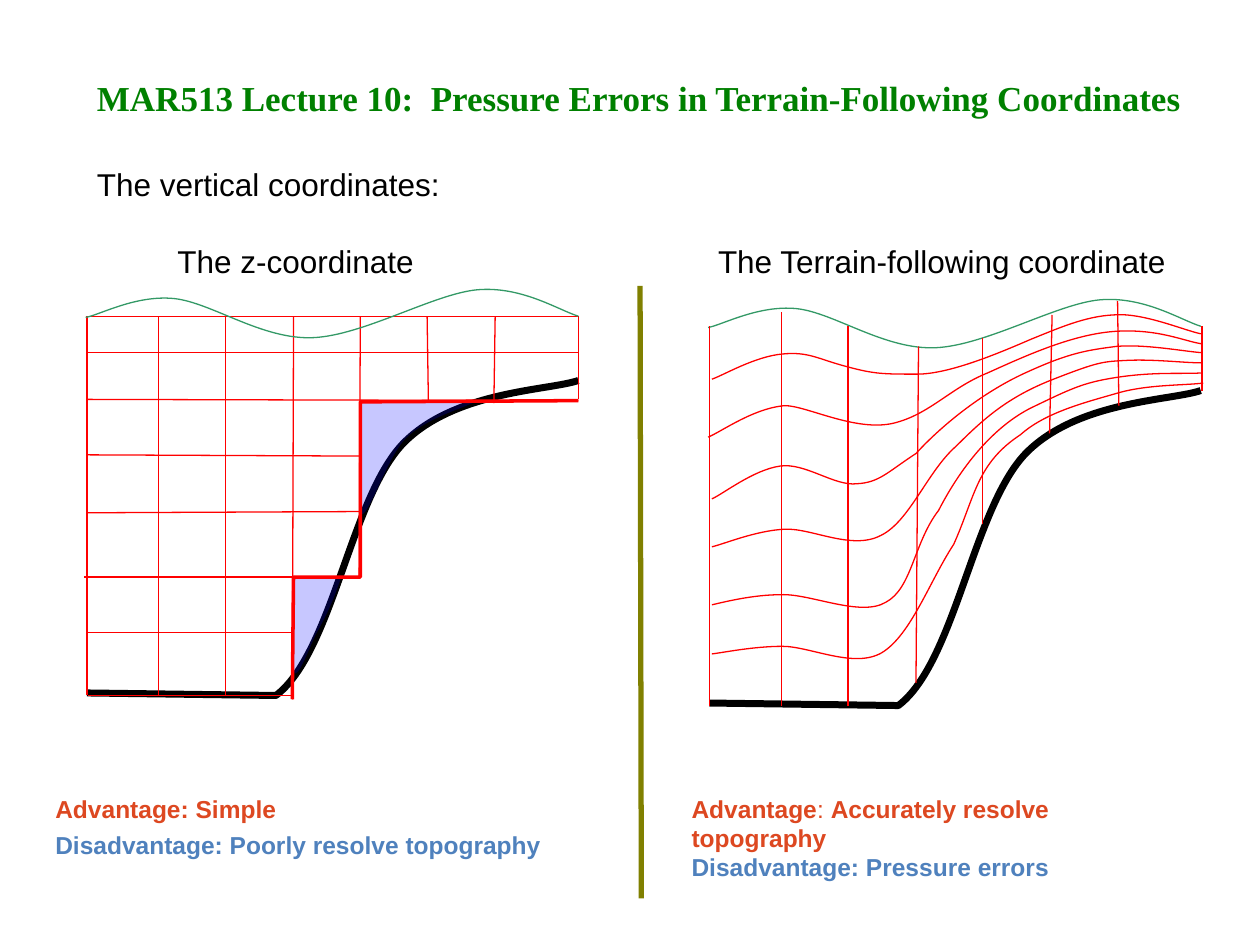
from dataclasses import dataclass

from lxml import etree
from pptx import Presentation, util as u
from pptx.dml.color import RGBColor
from pptx.enum import shapes, text
from pptx.oxml.ns import qn

# Grid: 1000 columns by 750 rows on a 10 x 7.5 inch slide
COLS, ROWS = 1000, 750
CELL = u.Inches(0.01)


@dataclass(frozen=True)
class Theme:
    title: str = "008000"
    ink: str = "000000"
    grid: str = "FF0000"
    wave: str = "339966"
    rule: str = "808000"
    gap: str = "0000FF"
    pro: str = "DD4821"
    con: str = "4F81BD"
    serif: str = "Times New Roman"
    sans: str = "Arial"
    head: int = 20
    body: int = 18
    note: int = 14
    thin: float = 0.75
    step: float = 2
    bar: float = 3
    bed: float = 4


T = Theme()

# Outlines shared by both panels, in cells from the panel's corner
BED = [(390, 75), (367, 83), (292, 83), (251, 125), (209, 169), (195, 291),
       (150, 325), (0, 323)]
WAVE = [(-1, 25), (10, 23), (39, 7), (69, 10), (99, 13), (139, 43), (180, 41),
        (220, 39), (276, 6), (310, 3), (345, 0), (374, 19), (390, 24)]

# z-coordinate grid: x1, y1, x2, y2
LEVELS = [(-1, 24, 390, 24), (0, 53, 390, 53), (0, 90, 390, 91),
          (0, 134, 218, 135), (0, 180, 217, 179), (-2, 231, 215, 231),
          (0, 275, 163, 275), (1, 325, 164, 325)]
WALLS = [(0, 24, 0, 325), (57, 24, 57, 325), (110, 24, 110, 325),
         (164, 24, 163, 328), (217, 24, 216, 231), (270, 24, 271, 92),
         (324, 24, 323, 93), (390, 24, 390, 90)]
STEPS = [(390, 91), (217, 92), (217, 231), (164, 231), (163, 328)]
GAPS = [
    [(309, 92), (218, 93), (217, 181), (223, 186), (238, 136), (253, 121),
     (268, 106), (295, 98), (306, 93)],
    [(202, 231), (165, 232), (164, 306), (167, 314), (176, 288), (182, 276),
     (196, 251), (198, 241), (202, 231)],
]

# Terrain-following grid
LAYERS = [
    [(2, 66), (11, 63), (36, 48), (58, 46), (79, 44), (86, 50), (109, 56),
     (131, 62), (138, 62), (165, 62), (192, 62), (235, 43), (256, 34),
     (276, 26), (298, 16), (321, 15), (344, 13), (376, 27), (390, 30)],
    [(-1, 112), (9, 108), (35, 89), (60, 87), (77, 87), (116, 108), (146, 101),
     (175, 94), (191, 73), (221, 61), (254, 46), (290, 30), (323, 28),
     (357, 26), (377, 36), (391, 38)],
    [(2, 161), (11, 157), (35, 138), (56, 135), (76, 132), (99, 151),
     (117, 149), (135, 148), (141, 140), (164, 125), (186, 101), (219, 75),
     (253, 60), (286, 45), (300, 43), (323, 40), (346, 38), (377, 44), (391, 45)],
    [(2, 199), (11, 197), (37, 186), (60, 185), (81, 184), (113, 202),
     (136, 190), (159, 179), (173, 139), (196, 119), (218, 97), (237, 80),
     (273, 66), (309, 52), (312, 52), (332, 51), (353, 50), (377, 53), (391, 53)],
    [(2, 245), (11, 243), (34, 237), (57, 237), (80, 236), (120, 255),
     (140, 243), (161, 232), (162, 196), (182, 170), (201, 133), (228, 101),
     (259, 87), (290, 72), (299, 68), (327, 64), (356, 60), (377, 62), (390, 61)],
    [(2, 284), (11, 283), (35, 278), (58, 278), (80, 278), (115, 296),
     (137, 283), (160, 269), (175, 226), (194, 197), (211, 159), (212, 133),
     (247, 110), (267, 92), (300, 84), (324, 77), (348, 70), (378, 71), (392, 69)],
]
POSTS = [(0, 24, 0, 325), (57, 13, 57, 325), (110, 24, 110, 325),
         (166, 40, 164, 307), (217, 33, 217, 181), (272, 15, 270, 109),
         (324, 4, 325, 87), (391, 24, 391, 75)]


def tint(hue):
    return RGBColor.from_string(hue)


def line(page, box, ends, hue=T.grid, wide=T.thin):
    """Straight line between two points of a box."""
    x, y = box[:2]
    a, b, c, d = ends
    link = page.shapes.add_connector(
        shapes.MSO_CONNECTOR.STRAIGHT,
        *(CELL * n for n in (x + a, y + b, x + c, y + d)))
    link.line.color.rgb = tint(hue)
    link.line.width = u.Pt(wide)
    etree.SubElement(link._element.spPr, qn("a:effectLst"))


def trace(page, box, pts, hue, wide=0, lead=0, tail=0):
    """Outline whose first `lead` and last `tail` segments are straight and
    whose other points are Bezier triples; no width means a clear fill."""
    x, y = box[:2]
    spots = [(x + a, y + b) for a, b in pts]
    pen = page.shapes.build_freeform(*spots[0], scale=CELL)
    pen.add_line_segments(spots[1:], close=not wide)
    form = pen.convert_to_shape()
    form.shadow.inherit = False
    legs = form._element.xpath(".//a:lnTo")
    bends = legs[lead:len(pts) - 1 - tail]
    for i in range(0, len(bends), 3):
        arc = etree.Element(qn("a:cubicBezTo"))
        bends[i].addprevious(arc)
        for leg in bends[i:i + 3]:
            arc.append(leg[0])
            leg.getparent().remove(leg)
    if wide:
        form.fill.background()
        form.line.color.rgb = tint(hue)
        form.line.width = u.Pt(wide)
    else:
        form.line.fill.background()
        form.fill.solid()
        form.fill.fore_color.rgb = tint(hue)
        shade = form._element.spPr.find(qn("a:solidFill"))[0]
        etree.SubElement(shade, qn("a:alpha"), val="22000")


def label(page, box, paras, size=T.body, face=T.sans, wrap=False, lift=0):
    """Text box; each paragraph is a list of (words, colour, bold)."""
    area = page.shapes.add_textbox(*(CELL * n for n in box))
    frame = area.text_frame
    frame.word_wrap = wrap
    frame.auto_size = text.MSO_AUTO_SIZE.SHAPE_TO_FIT_TEXT
    for i, parts in enumerate(paras):
        para = frame.add_paragraph() if i else frame.paragraphs[0]
        if i and lift:
            para.space_before = u.Pt(lift)
        for words, hue, bold in parts:
            run = para.add_run()
            run.text = words
            font = run.font
            font.name, font.size, font.bold = face, u.Pt(size), bold
            font.color.rgb = tint(hue)


def header(page, box):
    x, y, w, h = box
    label(page, (x, y, w, 44), [[(
        "MAR513 Lecture 10:  Pressure Errors in Terrain-Following Coordinates",
        T.title, True)]], T.head, T.serif)
    label(page, (x, y + 70, 299, 40),
          [[("The vertical coordinates:", T.ink, False)]])


def level(page, box):
    """Panel with flat levels and a stepped bottom."""
    x, y, w, h = box
    label(page, (x + 62, y - 40, 208, 40), [[("The z-coordinate", T.ink, False)]])
    trace(page, box, BED, T.ink, T.bed, tail=1)
    for ends in LEVELS + WALLS:
        line(page, box, ends)
    for gap in GAPS:
        trace(page, box, gap, T.gap, lead=2)
    trace(page, box, STEPS, T.grid, T.step, lead=len(STEPS) - 1)
    trace(page, box, WAVE, T.wave, T.thin)
    label(page, (x - 35, y + h, 412, 63),
          [[("Advantage: Simple", T.pro, True)],
           [("Disadvantage: Poorly resolve topography", T.con, True)]],
          T.note, lift=4)


def follow(page, box):
    """Panel with layers that follow the sea bed."""
    x, y, w, h = box
    label(page, (x - 3, y - 48, 379, 40),
          [[("The Terrain-following coordinate", T.ink, False)]])
    trace(page, box, BED, T.ink, T.bed, tail=1)
    trace(page, box, WAVE, T.wave, T.thin)
    for layer in LAYERS:
        trace(page, box, layer, T.grid, T.thin)
    for ends in POSTS:
        line(page, box, ends)
    label(page, (x - 24, y + h, 410, 57),
          [[("Advantage", T.pro, True), (": ", T.pro, False),
            ("Accurately resolve topography", T.pro, True)],
           [("Disadvantage: Pressure errors", T.con, True)]],
          T.note, wrap=True)


def main():
    deck = Presentation()
    deck.slide_width, deck.slide_height = CELL * COLS, CELL * ROWS
    page = deck.slides.add_slide(deck.slide_layouts[6])
    header(page, (67, 56, 888, 110))
    level(page, (69, 227, 390, 398))
    line(page, (508, 227), (0, 0, 1, 486), T.rule, T.bar)  # divider
    follow(page, (563, 235, 391, 390))
    deck.save("out.pptx")


if __name__ == "__main__":
    main()
